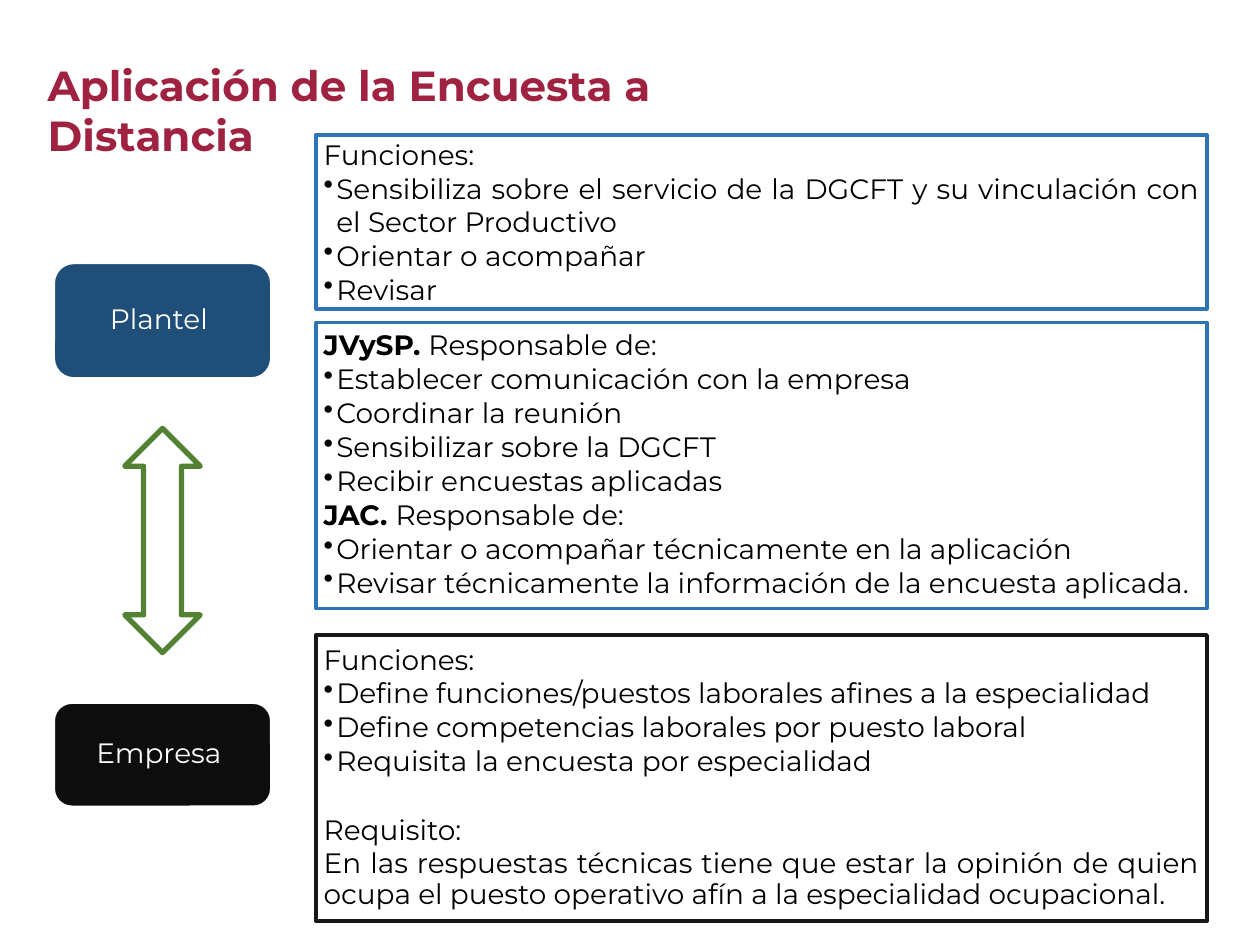
from lxml import etree
from pptx import Presentation
from pptx.dml.color import RGBColor
from pptx.enum import shapes, text
from pptx.oxml.ns import qn
from pptx.util import Inches, Pt

FONT = "Montserrat"
WINE = RGBColor(0x9F, 0x22, 0x41)
NAVY = RGBColor(0x1F, 0x4E, 0x79)
BLUE = RGBColor(0x2E, 0x75, 0xB6)
GREEN = RGBColor(0x54, 0x82, 0x35)
NEAR_BLACK = RGBColor(0x0D, 0x0D, 0x0D)
CHARCOAL = RGBColor(0x18, 0x17, 0x17)
BLACK = RGBColor(0, 0, 0)
WHITE = RGBColor(255, 255, 255)

KIND = shapes.MSO_SHAPE
ALIGN = text.PP_ALIGN
BULLET = "•"
LINE_GAP = 19.7  # one empty line, in points

SCHOOL_TASKS = [
    "Funciones:",
    "•Sensibiliza sobre el servicio de la DGCFT y su vinculación con el Sector Productivo ",
    "•Orientar o acompañar ",
    "•Revisar ",
]
STAFF_TASKS = [
    ("JVySP. ", "Responsable de:"),
    "•Establecer comunicación con la empresa",
    "•Coordinar la reunión",
    "•Sensibilizar sobre la DGCFT",
    "•Recibir encuestas aplicadas",
    ("JAC. ", "Responsable de:"),
    "•Orientar o acompañar técnicamente en la aplicación",
    "•Revisar técnicamente la información de la encuesta aplicada.",
]
COMPANY_TASKS = [
    "Funciones: ",
    "•Define funciones/puestos laborales afines a la especialidad",
    "•Define competencias laborales por puesto laboral",
    "•Requisita la encuesta por especialidad",
    "Requisito:",
    "En las respuestas técnicas tiene que estar la opinión de quien "
    "ocupa el puesto operativo afín a la especialidad ocupacional.",
]


def add_run(p, words, size=16, color=BLACK, bold=False):
    r = p.add_run()
    r.text = words
    r.font.name = FONT
    r.font.size = Pt(size)
    r.font.bold = bold
    r.font.color.rgb = color


def set_bullet(p):
    pPr = p._p.get_or_add_pPr()
    pPr.set("marL", str(Inches(0.1)))
    pPr.set("indent", str(Inches(-0.1)))
    etree.SubElement(pPr, qn("a:buChar")).set("char", BULLET)


def write(tf, items, align=ALIGN.LEFT, spacing=None, after=0, gap_before=None, **font):
    """Write one paragraph per item; a pair is a bold lead and its plain rest."""
    for i, item in enumerate(items):
        p = tf.paragraphs[0] if i == 0 else tf.add_paragraph()
        lead, rest = item if isinstance(item, tuple) else ("", item)
        if rest.startswith(BULLET):
            set_bullet(p)
        p.alignment = align
        p.line_spacing = spacing
        p.space_before = Pt(LINE_GAP if rest == gap_before else 0)
        p.space_after = Pt(after)
        if lead:
            add_run(p, lead, bold=True)
        add_run(p, rest.removeprefix(BULLET), **font)


def add_box(slide, kind, box, fill, line, weight, inset=0.06):
    sp = slide.shapes.add_shape(kind, *map(Inches, box))
    sp.shadow.inherit = False
    if fill is None:
        sp.fill.background()
    else:
        sp.fill.solid()
        sp.fill.fore_color.rgb = fill
    sp.line.color.rgb = line
    sp.line.width = Pt(weight)
    tf = sp.text_frame
    tf.word_wrap = True
    tf.vertical_anchor = text.MSO_ANCHOR.MIDDLE
    tf.margin_left = tf.margin_right = tf.margin_top = tf.margin_bottom = Inches(inset)
    return sp


def add_actor(slide, name, top, height, fill):
    sp = add_box(slide, KIND.ROUNDED_RECTANGLE, (0.43, top, 1.72, height),
                 fill, WHITE, 1, inset=0.12)
    sp.adjustments[0] = 0.17
    write(sp.text_frame, [name], align=ALIGN.CENTER, spacing=0.9, after=5.6, color=WHITE)


def add_panel(slide, items, top, height, line, **layout):
    sp = add_box(slide, KIND.RECTANGLE, (2.51, top, 7.07, height), None, line, 2.25)
    write(sp.text_frame, items, align=ALIGN.JUSTIFY, **layout)


def add_title(slide, words):
    sp = slide.shapes.add_textbox(Inches(0.28), Inches(0.42), Inches(5.52), Inches(0.5))
    sp.text_frame.word_wrap = True
    write(sp.text_frame, [words], size=24, color=WINE, bold=True)


def main():
    prs = Presentation()
    prs.slide_width, prs.slide_height = Inches(10), Inches(7.5)
    slide = prs.slides.add_slide(prs.slide_layouts[6])

    # Actors and their task panels
    tight = {"spacing": 0.9, "after": 2.1}
    add_actor(slide, "Plantel ", 2.09, 0.91, NAVY)
    add_panel(slide, SCHOOL_TASKS, 1.07, 1.38, BLUE)
    add_actor(slide, "Empresa ", 5.58, 0.82, NEAR_BLACK)
    add_panel(slide, COMPANY_TASKS, 5.04, 2.27, CHARCOAL, gap_before="Requisito:", **tight)

    add_title(slide, "Aplicación de la Encuesta a Distancia")

    # Two-way link between school and company
    add_box(slide, KIND.UP_DOWN_ARROW, (0.99, 3.4, 0.6, 1.78), None, GREEN, 3)

    add_panel(slide, STAFF_TASKS, 2.56, 2.27, BLUE, **tight)

    prs.save("out.pptx")


if __name__ == "__main__":
    main()
